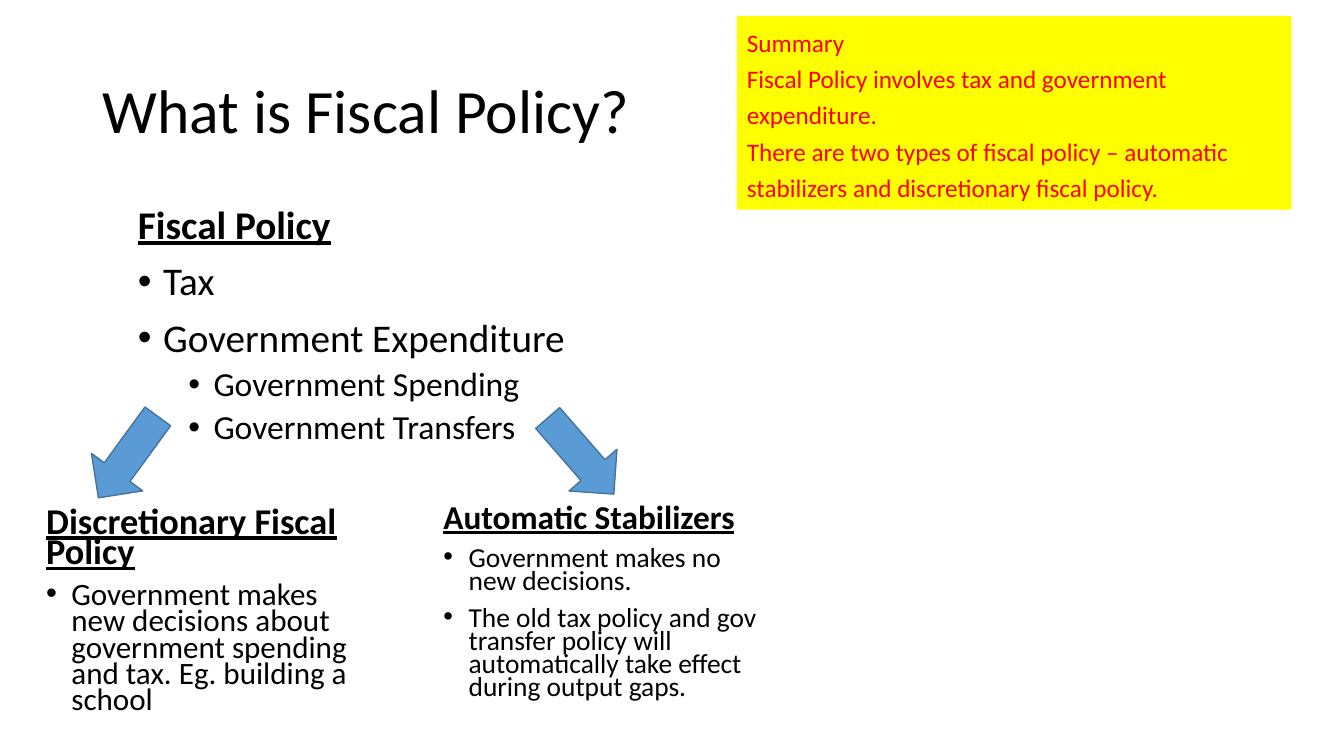
from lxml import etree
from pptx import Presentation
from pptx.dml.color import RGBColor
from pptx.enum.shapes import MSO_SHAPE
from pptx.enum.text import MSO_ANCHOR, MSO_AUTO_SIZE, PP_ALIGN
from pptx.oxml.ns import qn
from pptx.util import Emu, Pt

PX = 9144  # 100 px to the inch
RECT, ARROW = MSO_SHAPE.RECTANGLE, MSO_SHAPE.RIGHT_ARROW
TOP, MIDDLE = MSO_ANCHOR.TOP, MSO_ANCHOR.MIDDLE
LEFT, NO_FIT = PP_ALIGN.LEFT, MSO_AUTO_SIZE.NONE

BLACK = RGBColor(0x00, 0x00, 0x00)
RED = RGBColor(0xFF, 0x00, 0x00)
YELLOW = RGBColor(0xFF, 0xFF, 0x00)
BLUE = RGBColor(0x5B, 0x9B, 0xD5)
DARK_BLUE = RGBColor(0x43, 0x73, 0x9E)

TITLE_BOX = (92, 40, 1150, 145)
POLICY_BOX = (127, 199, 540, 254)
DISCRETIONARY_BOX = (36, 501, 343, 222)
STABILIZERS_BOX = (430, 498, 343, 222)
SUMMARY_BOX = (731, 16, 550, 192)
ARROWS = [((77, 422, 100, 63), 126.1), ((526, 421, 100, 63), 49)]

HEADING, BULLET, SUB_BULLET = "heading", "bullet", "sub-bullet"
INDENTS = {BULLET: 25, SUB_BULLET: 75}
HANGING = 25

POLICY = [
    (HEADING, "Fiscal Policy", 28),
    (BULLET, "Tax", 28),
    (BULLET, "Government Expenditure", 28),
    (SUB_BULLET, "Government Spending", 24),
    (SUB_BULLET, "Government Transfers", 24),
]
DISCRETIONARY = [
    (HEADING, "Discretionary Fiscal Policy", 25.9),
    (BULLET, "Government makes new decisions about government spending "
             "and tax. Eg. building a school", 22.2),
]
STABILIZERS = [
    (HEADING, "Automatic Stabilizers", 23.8),
    (BULLET, "Government makes no new decisions.", 19.6),
    (BULLET, "The old tax policy and gov transfer policy will "
             "automatically take effect during output gaps.", 19.6),
]
SUMMARY = [
    "Summary",
    "Fiscal Policy involves tax and government expenditure.",
    "There are two types of fiscal policy – automatic stabilizers "
    "and discretionary fiscal policy.",
]


def emu(box):
    return [Emu(v * PX) for v in box]


def set_all(target, values):
    for name, value in values.items():
        setattr(target, name, value)


def prepare_frame(tf, anchor=TOP):
    set_all(tf, {"word_wrap": True, "auto_size": NO_FIT,
                 "vertical_anchor": anchor})


def write(p, text, size, spacing, color=BLACK, before=0, **font):
    set_all(p, {"alignment": LEFT, "line_spacing": spacing,
                "space_before": Pt(before), "space_after": Pt(0)})
    r = p.add_run()
    r.text = text
    set_all(r.font, {"name": "Calibri", "size": Pt(size), **font})
    r.font.color.rgb = color


def add_bullet(p, indent):
    pPr = p._p.get_or_add_pPr()
    pPr.set("marL", str(indent * PX))
    pPr.set("indent", str(-HANGING * PX))
    etree.SubElement(pPr, qn("a:buFont")).set("typeface", "Arial")
    etree.SubElement(pPr, qn("a:buChar")).set("char", "•")


def paragraph(tf, i):
    return tf.add_paragraph() if i else tf.paragraphs[0]


def add_title(slide, box, text):
    title = slide.shapes.title
    set_all(title, dict(zip(("left", "top", "width", "height"), emu(box))))
    tf = title.text_frame
    prepare_frame(tf, MIDDLE)
    write(tf.paragraphs[0], text, 44, 0.9)


def add_topic(slide, box, items, spacing):
    """Underlined heading followed by its bullets."""
    tf = slide.shapes.add_textbox(*emu(box)).text_frame
    prepare_frame(tf)
    for i, (kind, text, size) in enumerate(items):
        p = paragraph(tf, i)
        if kind in INDENTS:
            add_bullet(p, INDENTS[kind])
        if kind == SUB_BULLET:
            p.level = 1
        before = 0 if i == 0 else 5 if kind == SUB_BULLET else 10
        heading = kind == HEADING
        write(p, text, size, spacing, before=before,
              bold=heading, underline=heading)


def add_block(slide, kind, box, fill):
    sp = slide.shapes.add_shape(kind, *emu(box))
    sp.shadow.inherit = False
    sp.fill.solid()
    sp.fill.fore_color.rgb = fill
    return sp


def add_arrow(slide, box, angle):
    sp = add_block(slide, ARROW, box, BLUE)
    sp.rotation = angle
    sp.line.color.rgb = DARK_BLUE
    sp.line.width = Pt(1)


def add_summary(slide, box, lines):
    sp = add_block(slide, RECT, box, YELLOW)
    sp.line.fill.background()
    tf = sp.text_frame
    prepare_frame(tf)
    for i, text in enumerate(lines):
        write(paragraph(tf, i), text, 18, 1.2, RED)


def main():
    prs = Presentation()
    prs.slide_width, prs.slide_height = emu((1333, 750))
    slide = prs.slides.add_slide(prs.slide_layouts[5])

    # Title and the policy overview
    add_title(slide, TITLE_BOX, "What is Fiscal Policy?")
    add_topic(slide, POLICY_BOX, POLICY, 0.9)

    # The two types of policy, with arrows leading to them
    add_topic(slide, DISCRETIONARY_BOX, DISCRETIONARY, 0.7)
    add_topic(slide, STABILIZERS_BOX, STABILIZERS, 0.7)
    for box, angle in ARROWS:
        add_arrow(slide, box, angle)

    # Summary panel
    add_summary(slide, SUMMARY_BOX, SUMMARY)

    prs.save("out.pptx")


if __name__ == "__main__":
    main()
